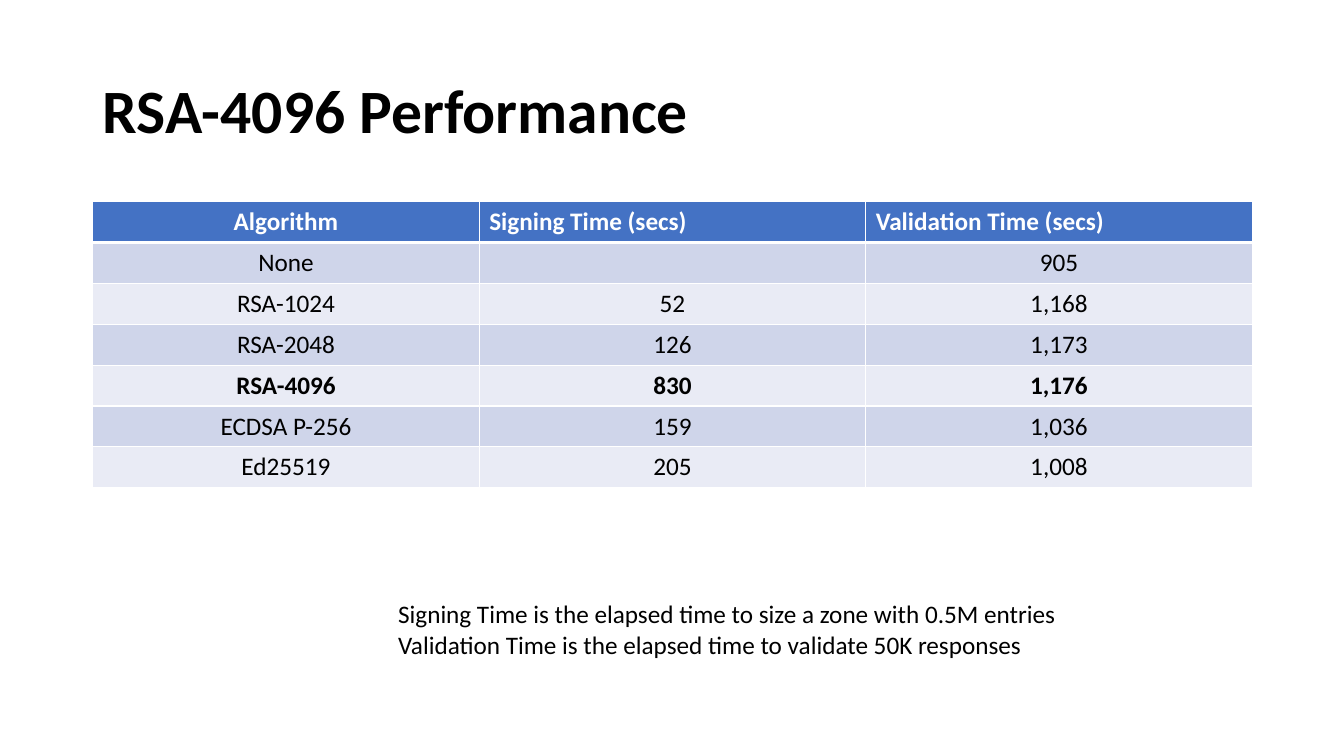
from pptx import Presentation
from pptx.dml.color import RGBColor
from pptx.enum.text import MSO_ANCHOR as Anchor, PP_ALIGN as Align
from pptx.oxml import parse_xml
from pptx.oxml.ns import nsdecls
from pptx.util import Inches, Pt

BLACK = RGBColor(0x00, 0x00, 0x00)
WHITE = RGBColor(0xFF, 0xFF, 0xFF)
BLUE = RGBColor(0x44, 0x72, 0xC4)
BAND_DARK = RGBColor(0xCF, 0xD5, 0xEA)
BAND_LIGHT = RGBColor(0xE9, 0xEB, 0xF5)

HEADER = ["Algorithm", "Signing Time (secs)", "Validation Time (secs)"]
TIMES = [
    ["None", "", "905"],
    ["RSA-1024", "52", "1,168"],
    ["RSA-2048", "126", "1,173"],
    ["RSA-4096", "830", "1,176"],
    ["ECDSA P-256", "159", "1,036"],
    ["Ed25519", "205", "1,008"],
]
HIGHLIGHT = "RSA-4096"
NOTES = [
    "Signing Time is the elapsed time to size a zone with 0.5M entries",
    "Validation Time is the elapsed time to validate 50K responses",
]


def write(p, text, font="Calibri", size=18, color=BLACK, bold=False,
          align=Align.LEFT, spacing=None):
    """Write formatted text into a paragraph."""
    p.alignment = align
    if spacing:
        p.line_spacing = spacing
    if text:
        r = p.add_run()
        r.text = text
        r.font.name, r.font.size, r.font.bold = font, Pt(size), bold
        r.font.color.rgb = color


class Deck:
    """Hold the font style and the current slide."""

    def __init__(self, font):
        self.font = font
        self.prs = Presentation()
        self.prs.slide_width, self.prs.slide_height = Inches(13.33), Inches(7.5)
        self.s = self.prs.slides.add_slide(self.prs.slide_layouts[6])

    def text(self, lines, x, y, w, h, anchor=Anchor.TOP, wrap=True, **style):
        """Add a text box with one paragraph per line."""
        tf = self.s.shapes.add_textbox(
            Inches(x), Inches(y), Inches(w), Inches(h)).text_frame
        tf.word_wrap, tf.vertical_anchor = wrap, anchor
        for i, line in enumerate(lines):
            p = tf.add_paragraph() if i else tf.paragraphs[0]
            write(p, line, font=self.font, **style)

    def borders(self, cell, top, bottom):
        """Draw white lines around a cell."""
        tc_pr = cell._tc.get_or_add_tcPr()
        for side, width in zip("LRTB", (1, 1, top, bottom)):
            tc_pr.append(parse_xml(
                f'<a:ln{side} {nsdecls("a")} w="{Pt(width)}"><a:solidFill>'
                f'<a:srgbClr val="{WHITE}"/></a:solidFill></a:ln{side}>'))

    def table(self, rows, x, y, w, h):
        """Add a banded table whose first row is the header."""
        table = self.s.shapes.add_table(
            len(rows), len(rows[0]), Inches(x), Inches(y), Inches(w), Inches(h)).table
        for i, row in enumerate(rows):
            head = i == 0
            fill = BLUE if head else (BAND_LIGHT, BAND_DARK)[i % 2]
            for j, value in enumerate(row):
                cell = table.cell(i, j)
                self.borders(cell, 3 if i == 1 else 1, 3 if head else 1)
                cell.fill.solid()
                cell.fill.fore_color.rgb = fill
                write(cell.text_frame.paragraphs[0], value, font=self.font,
                      color=WHITE if head else BLACK,
                      bold=head or row[0] == HIGHLIGHT,
                      align=Align.LEFT if head and j else Align.CENTER)


def main():
    """Build the slide and save it."""
    deck = Deck("Calibri")
    deck.text(["RSA-4096 Performance"], 0.92, 0.4, 11.5, 1.45,
              anchor=Anchor.MIDDLE, size=44, bold=True, spacing=0.9)
    deck.text(NOTES, 3.85, 5.89, 6.81, 0.71, wrap=False)
    deck.table([HEADER] + TIMES, 0.92, 2, 11.5, 2.84)
    deck.prs.save("out.pptx")


if __name__ == "__main__":
    main()
